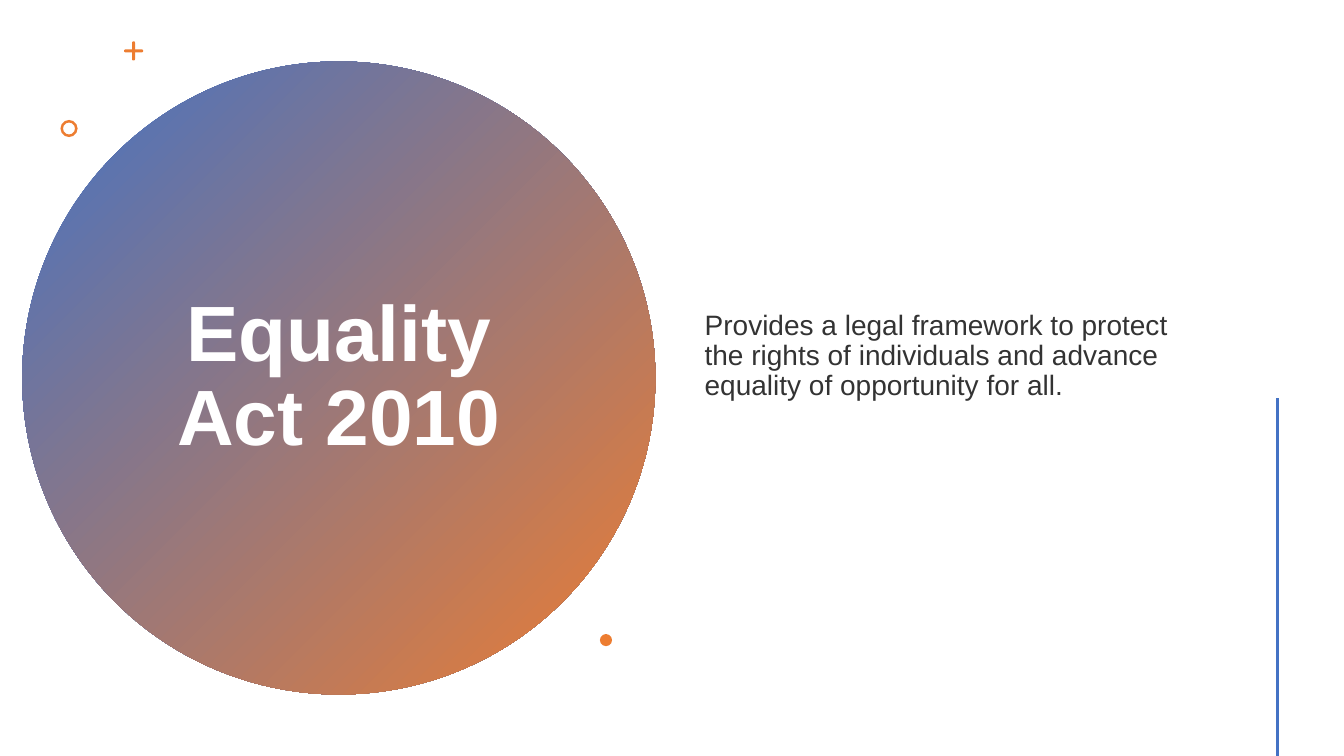
from dataclasses import dataclass

from pptx import Presentation
from pptx.dml.color import RGBColor
from pptx.enum.shapes import MSO_CONNECTOR, MSO_SHAPE as SHAPE
from pptx.enum.text import MSO_ANCHOR, PP_ALIGN as ALIGN
from pptx.oxml.ns import qn
from pptx.util import Inches, Pt


@dataclass(frozen=True)
class Theme:
    font: str = "Arial"
    title_size: int = 56
    body_size: int = 20
    blue: RGBColor = RGBColor(0x44, 0x72, 0xC4)
    orange: RGBColor = RGBColor(0xED, 0x7D, 0x31)
    white: RGBColor = RGBColor(0xFF, 0xFF, 0xFF)
    ink: RGBColor = RGBColor(0x33, 0x33, 0x33)


THEME = Theme()


def add_shape(slide, kind, left, top, width, height, color=THEME.orange):
    sp = slide.shapes.add_shape(kind, Inches(left), Inches(top), Inches(width), Inches(height))
    sp.shadow.inherit = False
    sp.line.fill.background()
    sp.fill.solid()
    sp.fill.fore_color.rgb = color
    return sp


def add_text(slide, text, left, top, width, height, *, size, color, bold=False, align=ALIGN.LEFT):
    box = slide.shapes.add_textbox(Inches(left), Inches(top), Inches(width), Inches(height))
    tf = box.text_frame
    tf.word_wrap = True
    tf.vertical_anchor = MSO_ANCHOR.MIDDLE
    p = tf.paragraphs[0]
    p.alignment = align
    p.line_spacing = 0.9
    r = p.add_run()
    r.text = text
    r.font.name = THEME.font
    r.font.size = Pt(size)
    r.font.bold = bold
    r.font.color.rgb = color


def add_plus(slide, left, top, size, stroke):
    inset = (size - stroke) / 2
    for x, y, w, h in ((left, top + inset, size, stroke), (left + inset, top, stroke, size)):
        bar = add_shape(slide, SHAPE.ROUNDED_RECTANGLE, x, y, w, h)
        bar.adjustments[0] = 0.5


def add_title_disc(slide, left, top, size):
    """Draw the gradient disc with its title and the small ornaments around it."""
    disc = add_shape(slide, SHAPE.OVAL, left, top, size, size)
    disc.fill.gradient()
    disc.fill.gradient_angle = 315
    for stop, color in zip(disc.fill.gradient_stops, (THEME.blue, THEME.orange)):
        stop.color.rgb = color

    title_width, title_height = 3.99, 4.67
    add_text(slide, "Equality Act 2010", left + (size - title_width) / 2,
             top + (size - title_height) / 2, title_width, title_height,
             size=THEME.title_size, color=THEME.white, bold=True, align=ALIGN.CENTER)

    add_plus(slide, left + 1.01, top - 0.2, 0.19, 0.03)
    ring = add_shape(slide, SHAPE.DONUT, left + 0.38, top + 0.58, 0.17, 0.17)
    ring.adjustments[0] = 0.15
    add_shape(slide, SHAPE.OVAL, left + 5.73, top + 5.68, 0.12, 0.12)


def add_summary(slide, left, top, width, height):
    add_text(slide, "Provides a legal framework to protect the rights of individuals "
             "and advance equality of opportunity for all.",
             left, top, width, height, size=THEME.body_size, color=THEME.ink)


def add_accent_line(slide, x, top, bottom):
    line = slide.shapes.add_connector(MSO_CONNECTOR.STRAIGHT, Inches(x), Inches(top),
                                      Inches(x), Inches(bottom))
    line.line.color.rgb = THEME.blue
    line.line.width = Pt(2)
    sp_pr = line._element.spPr
    sp_pr.append(sp_pr.makeelement(qn("a:effectLst"), {}))


def main():
    prs = Presentation()
    prs.slide_width, prs.slide_height = Inches(13.33), Inches(7.5)
    slide = prs.slides.add_slide(prs.slide_layouts[6])
    add_title_disc(slide, 0.22, 0.61, 6.28)
    add_summary(slide, 6.89, 0.57, 5.22, 5.93)
    add_accent_line(slide, 12.67, 3.95, 7.5)
    prs.save("out.pptx")


if __name__ == "__main__":
    main()
